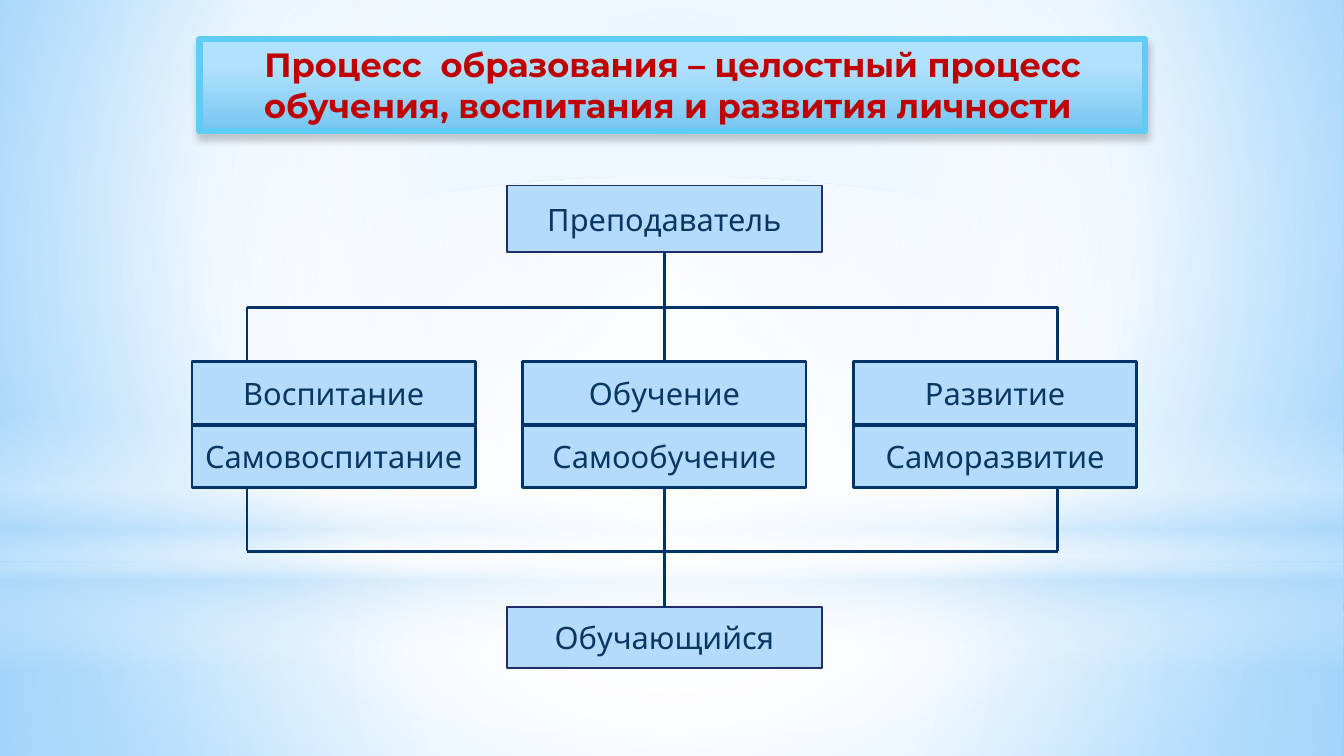
from lxml.etree import SubElement as Sub
from pptx import Presentation
from pptx.dml.color import RGBColor
from pptx.enum.shapes import MSO_CONNECTOR as Link, MSO_SHAPE as Kind
from pptx.enum.text import MSO_ANCHOR as Anchor, PP_ALIGN as Align
from pptx.oxml.ns import qn
from pptx.util import Inches, Pt

WHITE = RGBColor(0xFF, 0xFF, 0xFF)
BLACK = RGBColor(0x00, 0x00, 0x00)
PALE = RGBColor(0xB4, 0xDC, 0xFA)
SKY = RGBColor(0x9E, 0xD5, 0xFF)
AZURE = RGBColor(0x5B, 0xB9, 0xFF)
LIGHT = RGBColor(0xB1, 0xE2, 0xFD)
DEEP = RGBColor(0x76, 0xC6, 0xF1)
CYAN = RGBColor(0x5E, 0xCC, 0xF3)
RED = RGBColor(0xC0, 0x00, 0x00)
INK = RGBColor(0x08, 0x37, 0x63)
EDGE = RGBColor(0x1F, 0x2E, 0x69)
NAVY = RGBColor(0x00, 0x33, 0x66)

MID = 6.59
RAILS = (2.45, 10.49)
PAIRS = (
    ("Воспитание", "Самовоспитание"),
    ("Обучение", "Самообучение"),
    ("Развитие", "Саморазвитие"),
)


def add_tint(host, color, alpha):
    """Add a colour with an opacity in percent to an XML element."""
    tint = Sub(host, qn("a:srgbClr"), val=str(color))
    if alpha < 100:
        Sub(tint, qn("a:alpha"), val=str(alpha * 1000))


def set_grad(fill, host, stops, focus=None):
    """Fill with a gradient, round if a focus is given and downward if not."""
    fill.solid()
    solid = host.find(qn("a:solidFill"))
    grad = Sub(host, qn("a:gradFill"), rotWithShape="1")
    host.replace(solid, grad)
    steps = Sub(grad, qn("a:gsLst"))
    for pos, color, alpha in stops:
        add_tint(Sub(steps, qn("a:gs"), pos=str(pos * 1000)), color, alpha)
    if focus:
        way = Sub(grad, qn("a:path"), path="circle")
        sides = {side: str(part * 1000) for side, part in zip("ltrb", focus)}
        Sub(way, qn("a:fillToRect"), sides)
    else:
        Sub(grad, qn("a:lin"), ang="5400000", scaled="0")


def add_shape(slide, kind, left, top, width, height):
    """Add a preset shape without line or shadow."""
    shape = slide.shapes.add_shape(
        kind, Inches(left), Inches(top), Inches(width), Inches(height))
    shape.shadow.inherit = False
    shape.line.fill.background()
    return shape


def add_glow(slide, kind, top, height, stops, focus=None):
    """Add a full-width gradient layer of the backdrop."""
    glow = add_shape(slide, kind, 0, top, 13.33, height)
    set_grad(glow.fill, glow.element.spPr, stops, focus)


def set_line(line, color, width):
    """Set the colour and width of a line."""
    line.color.rgb = color
    line.width = Pt(width)


def set_text(shape, text, font, size, color, bold=False):
    """Write one centred paragraph into a shape."""
    frame = shape.text_frame
    frame.word_wrap = True
    para = frame.paragraphs[0]
    para.text = text
    para.alignment = Align.CENTER
    para.font.name = font
    para.font.size = Pt(size)
    para.font.bold = bold
    para.font.color.rgb = color


def add_title(slide, text):
    """Add the framed title with its soft shadow."""
    title = add_shape(slide, Kind.RECTANGLE, 1.98, 0.39, 9.38, 0.91)
    props = title.element.spPr
    set_grad(title.fill, props, [(28, LIGHT, 100), (100, DEEP, 100)])
    set_line(title.line, CYAN, 4.5)
    shade = Sub(props.find(qn("a:effectLst")), qn("a:outerShdw"),
                blurRad=str(Pt(5)), dist=str(Pt(4)), dir="5400000",
                algn="ctr", rotWithShape="0")
    add_tint(shade, BLACK, 20)
    set_text(title, text, "Montserrat", 24, RED, True)
    title.text_frame.vertical_anchor = Anchor.TOP


def add_box(slide, text, top, width, height, mid=MID, edge=NAVY, weight=2):
    """Add a labelled box centred on a given abscissa."""
    box = add_shape(
        slide, Kind.RECTANGLE, mid - width / 2, top, width, height)
    box.fill.solid()
    box.fill.fore_color.rgb = PALE
    set_line(box.line, edge, weight)
    set_text(box, text, "Cabin", 22, INK)
    box.text_frame.vertical_anchor = Anchor.MIDDLE


def add_link(slide, *ends):
    """Add a straight line between two points."""
    link = slide.shapes.add_connector(Link.STRAIGHT, *map(Inches, ends))
    set_line(link.line, NAVY, 2)
    Sub(link.element.spPr, qn("a:effectLst"))


def add_scene(slide):
    """Build the blue backdrop and its glowing layers."""
    fill = slide.background.fill
    fill.solid()
    host = next(slide.element.iter(qn("p:bgPr")))
    set_grad(fill, host, [(0, SKY, 100), (60, WHITE, 100), (100, AZURE, 100)],
             (20, 10, 20, 60))
    core = (50, 50, 50, 50)
    add_glow(slide, Kind.RECTANGLE, 5.58, 1.92,
             [(0, WHITE, 91), (37, WHITE, 76), (100, PALE, 79)], core)
    add_glow(slide, Kind.RECTANGLE, 0, 5.58,
             [(0, WHITE, 89), (48, WHITE, 62), (100, PALE, 79)], core)
    add_glow(slide, Kind.RECTANGLE, 4.12, 2.5,
             [(0, WHITE, 0), (29, WHITE, 30), (45, PALE, 40),
              (55, WHITE, 26), (65, PALE, 60), (100, WHITE, 0)])
    add_glow(slide, Kind.OVAL, 1.75, 5.58,
             [(0, WHITE, 100), (56, WHITE, 0)], core)


def main():
    """Build the slide and save it."""
    deck = Presentation()
    deck.slide_width, deck.slide_height = Inches(13.33), Inches(7.5)
    slide = deck.slides.add_slide(deck.slide_layouts[6])
    add_scene(slide)
    add_title(slide, "Процесс  образования – целостный процесс "
                     "обучения, воспитания и развития личности ")
    add_box(slide, "Преподаватель", 1.84, 3.12, 0.66, edge=EDGE, weight=1.25)
    add_box(slide, "Обучающийся", 6.02, 3.12, 0.61, edge=EDGE, weight=1.25)
    for col, pair in enumerate(PAIRS):
        for row, text in enumerate(pair):
            add_box(slide, text, 3.59 + 0.63 * row, 2.81, 0.62,
                    MID + 3.28 * (col - 1))
    for rail, inner, outer in ((3.05, 3.59, 2.5), (5.47, 4.84, 6.02)):
        add_link(slide, RAILS[0], rail, RAILS[1], rail)
        add_link(slide, MID, outer, MID, inner)
        for side in RAILS:
            add_link(slide, side, rail, side, inner)
    deck.save("out.pptx")


if __name__ == "__main__":
    main()
